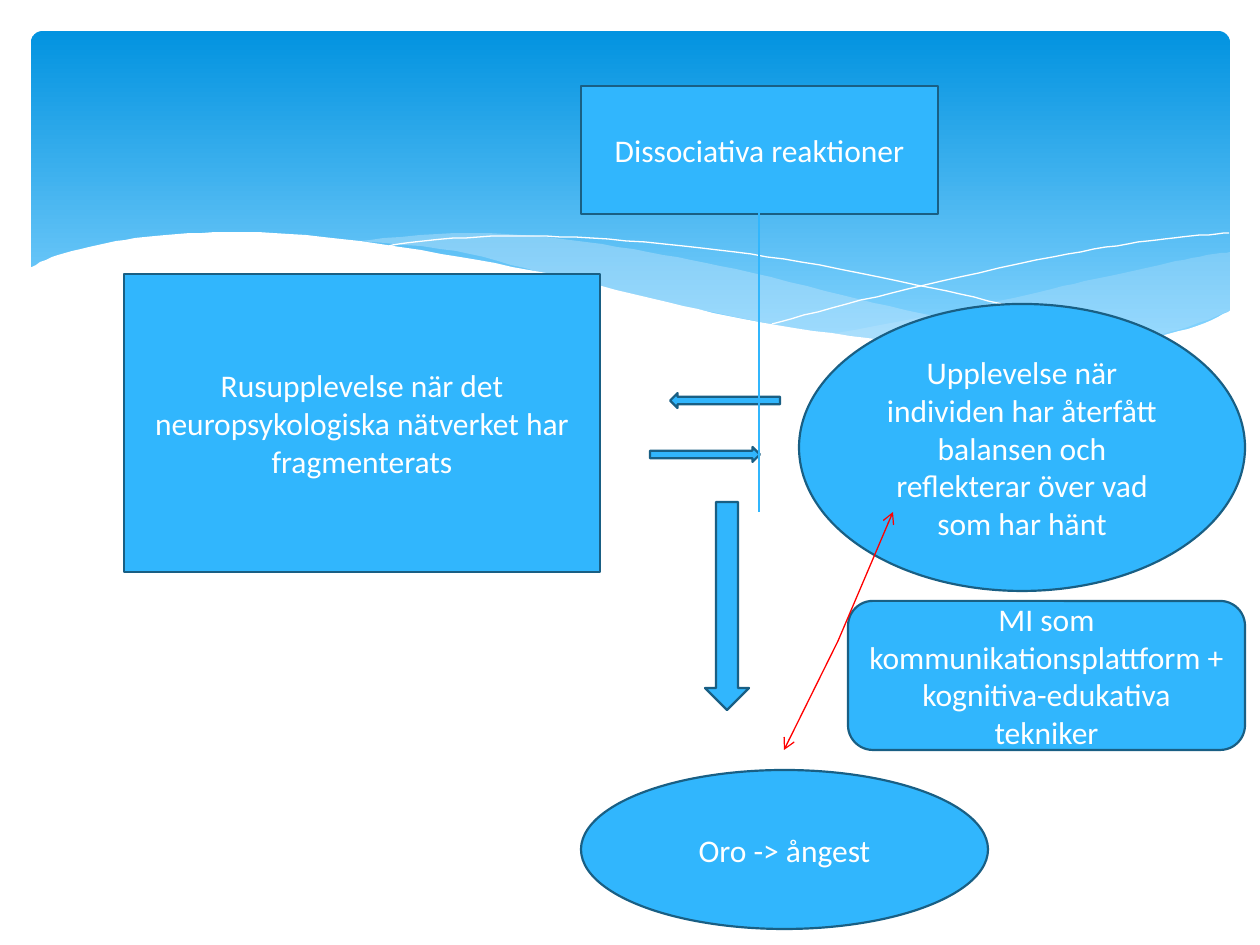
from lxml import etree
from pptx import Presentation
from pptx import util as u
from pptx.dml.color import RGBColor
from pptx.enum import shapes, text
from pptx.oxml.ns import qn

PX = u.Inches(10) / 1260
WHITE = RGBColor(0xFF, 0xFF, 0xFF)
BLUE = RGBColor(0x31, 0xB6, 0xFD)
OUTLINE = RGBColor(0x19, 0x5F, 0x84)
RED = RGBColor(0xFF, 0x00, 0x00)
SKY_TOP = RGBColor(0x02, 0x93, 0xE0)
SKY_BOTTOM = RGBColor(0x83, 0xD3, 0xFE)
MIST = RGBColor(0xC6, 0xE7, 0xFC)
KIND = shapes.MSO_SHAPE

# Banner waves: each is a list of smooth edges, in px
RIGHT_RIBBON = [
    [(833, 334), (918, 318), (1014, 298), (1085, 281), (1142, 269), (1192, 258), (1230, 252)],
    [(1230, 311), (1178, 330), (1120, 342), (1050, 349), (984, 349), (909, 342), (833, 334)],
]
LEFT_RIBBON = [
    [(360, 241), (455, 233), (554, 238), (648, 252), (736, 269), (842, 295),
     (934, 316), (1017, 332), (1125, 344)],
    [(1104, 347), (1043, 350), (974, 349), (893, 343), (819, 333), (735, 317),
     (618, 292), (538, 272), (456, 251), (360, 241)],
]
FALLING_CURVE = [[(389, 246), (433, 240), (505, 236), (591, 238), (701, 248), (801, 262),
                  (916, 285), (1002, 304), (1095, 329), (1143, 343)]]
RISING_CURVE = [[(772, 324), (847, 304), (942, 281), (1053, 257), (1128, 244),
                 (1182, 237), (1229, 233)]]
WHITE_WAVE = [
    [(29, 268), (58, 255), (107, 243), (166, 235), (243, 232), (341, 239), (460, 257),
     (563, 277), (667, 302), (759, 322), (867, 338), (959, 346), (1054, 348),
     (1134, 341), (1197, 326), (1231, 310)],
    [(1231, 414), (29, 414)],
]

# Kind, (left, top, width, height), rotation, wording
BOXES = [
    (KIND.RECTANGLE, (124, 274, 476, 298), 0,
     "Rusupplevelse när det neuropsykologiska nätverket har fragmenterats"),
    (KIND.OVAL, (799, 304, 446, 287), 0,
     "Upplevelse när individen har återfått balansen och reflekterar över vad som har hänt"),
    (KIND.RIGHT_ARROW, (650, 447, 110, 15), 0, ""),
    (KIND.DOWN_ARROW, (705, 502, 44, 208), 0, ""),
    (KIND.OVAL, (581, 770, 407, 159), 0, "Oro -> ångest"),
    (KIND.ROUNDED_RECTANGLE, (848, 601, 397, 149), 0,
     "MI som kommunikationsplattform + kognitiva-edukativa tekniker"),
    (KIND.RIGHT_ARROW, (670, 393, 110, 15), 180, ""),
    (KIND.RECTANGLE, (581, 86, 357, 128), 0, "Dissociativa reaktioner"),
]

# From, to, colour, arrowhead
LINES = [
    ((838, 641), (784, 750), RED, True),
    ((838, 641), (893, 512), RED, True),
    ((759, 185), (759, 512), BLUE, False),
]


def emu(lengths):
    return [round(length * PX) for length in lengths]


def smooth(knots, steps=6):
    """Points of a Catmull-Rom curve through the knots."""
    if len(knots) < 3:
        return knots
    padded = [knots[0], *knots, knots[-1]]
    points = [knots[0]]
    for a, b, c, d in zip(padded, padded[1:], padded[2:], padded[3:]):
        for step in range(1, steps + 1):
            t = step / steps
            points.append(tuple(
                round((2 * q + (r - p) * t + (2 * p - 5 * q + 4 * r - s) * t ** 2
                       + (3 * q - p - 3 * r + s) * t ** 3) / 2, 2)
                for p, q, r, s in zip(a, b, c, d)))
    return points


def add_wave(slide, edges, colour, opacity=100, filled=True):
    points = [point for edge in edges for point in smooth(edge)]
    builder = slide.shapes.build_freeform(*points[0], scale=PX)
    builder.add_line_segments(points[1:], close=filled)
    wave = builder.convert_to_shape()
    wave.shadow.inherit = False
    if not filled:
        wave.fill.background()
        wave.line.color.rgb = colour
        wave.line.width = u.Pt(0)
        return
    wave.fill.solid()
    wave.fill.fore_color.rgb = colour
    wave.line.fill.background()
    if opacity < 100:
        rgb = wave.fill._xPr.find(".//" + qn("a:srgbClr"))
        etree.SubElement(rgb, qn("a:alpha"), val=str(opacity * 1000))


def add_banner(slide):
    sky = slide.shapes.add_shape(KIND.ROUNDED_RECTANGLE, *emu((31, 31, 1199, 340)))
    sky.adjustments[0] = 0.034
    sky.shadow.inherit = False
    sky.line.fill.background()
    sky.fill.gradient()
    sky.fill.gradient_angle = 270
    for stop, position, colour in zip(sky.fill.gradient_stops, (0, 0.9), (SKY_TOP, SKY_BOTTOM)):
        stop.position = position
        stop.color.rgb = colour
    add_wave(slide, RIGHT_RIBBON, MIST, opacity=29)
    add_wave(slide, LEFT_RIBBON, MIST, opacity=40)
    add_wave(slide, FALLING_CURVE, WHITE, filled=False)
    add_wave(slide, RISING_CURVE, WHITE, filled=False)
    add_wave(slide, WHITE_WAVE, WHITE)


def add_box(slide, kind, place, rotation, wording):
    box = slide.shapes.add_shape(kind, *emu(place))
    box.rotation = rotation
    box.shadow.inherit = False
    box.fill.solid()
    box.fill.fore_color.rgb = BLUE
    box.line.color.rgb = OUTLINE
    box.line.width = u.Pt(1.25)
    if wording:
        frame = box.text_frame
        frame.word_wrap = True
        frame.vertical_anchor = text.MSO_ANCHOR.MIDDLE
        paragraph = frame.paragraphs[0]
        paragraph.text = wording
        paragraph.alignment = text.PP_ALIGN.CENTER
        paragraph.font.name = "Calibri"
        paragraph.font.size = u.Pt(18)
        paragraph.font.color.rgb = WHITE


def add_line(slide, start, end, colour, arrow):
    line = slide.shapes.add_connector(shapes.MSO_CONNECTOR.STRAIGHT, *emu(start + end))
    line.line.color.rgb = colour
    line.line.width = u.Pt(0.75)
    if arrow:
        etree.SubElement(line.line._get_or_add_ln(), qn("a:tailEnd"), type="arrow")
    etree.SubElement(line._element.spPr, qn("a:effectLst"))


def main():
    deck = Presentation()
    deck.slide_width, deck.slide_height = u.Inches(10), u.Inches(7.5)
    slide = deck.slides.add_slide(deck.slide_layouts[6])
    add_banner(slide)
    for box in BOXES:
        add_box(slide, *box)
    for line in LINES:
        add_line(slide, *line)
    deck.save("out.pptx")


if __name__ == "__main__":
    main()
